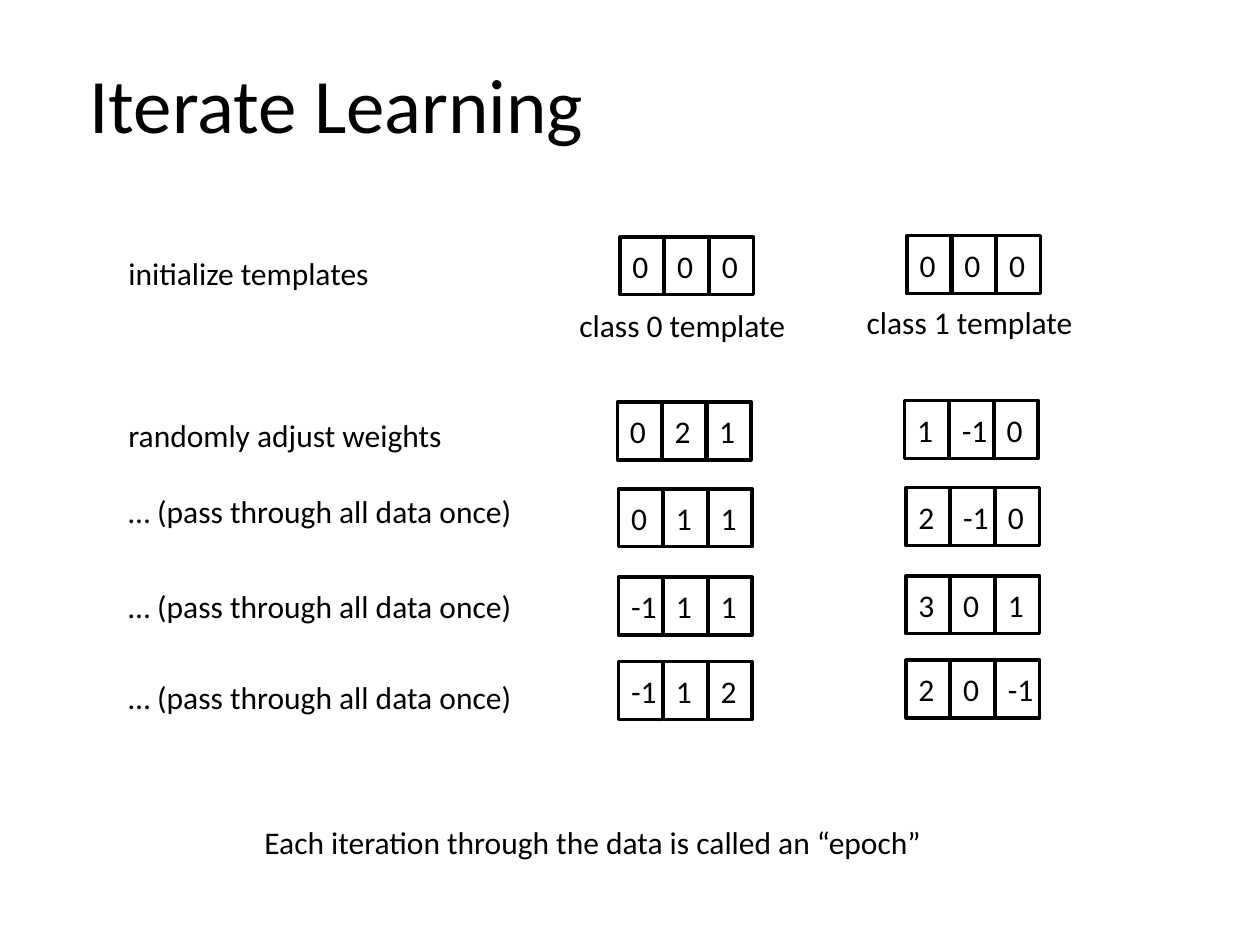
from pptx import Presentation
from pptx.dml.color import RGBColor
from pptx.enum.shapes import MSO_SHAPE as Shape
from pptx.enum.text import MSO_ANCHOR as Anchor, PP_ALIGN as Align
from pptx.util import Inches, Pt

BLACK = "000000"
CELL_WIDTH, CELL_HEIGHT, CELL_STEP = 0.35, 0.46, 0.355
CLASS_GAP, CLASS_RISE = 2.28, 0.01
PASS_TEXT = "… (pass through all data once)"

# Left and top of the class 0 template, then the weights of both classes
WEIGHT_ROWS = [
    (4.92, 1.88, (0, 0, 0), (0, 0, 0)),
    (4.9, 3.19, (0, 2, 1), (1, -1, 0)),
    (4.91, 3.88, (0, 1, 1), (2, -1, 0)),
    (4.91, 4.58, (-1, 1, 1), (3, 0, 1)),
    (4.91, 5.25, (-1, 1, 2), (2, 0, -1)),
]

# Left, top, width, height and paragraphs
LABELS = [
    (0.92, 1.97, 2.25, 0.4, ["initialize templates"]),
    (4.5, 2.38, 1.9, 0.4, ["class 0 template"]),
    (6.78, 2.36, 1.9, 0.4, ["class 1 template"]),
    (0.92, 3.25, 3.55, 1.01, ["randomly adjust weights", PASS_TEXT]),
    (0.92, 4.61, 3.55, 0.4, [PASS_TEXT]),
    (0.92, 5.33, 3.55, 0.4, [PASS_TEXT]),
    (2, 6.48, 6.44, 0.4, ["Each iteration through the data is called an “epoch”"]),
]


def rgb(value):
    return RGBColor.from_string(value)


def write(shape, paragraphs, size=18, color=BLACK, font="Calibri", gap=0,
          anchor=Anchor.TOP, wrap=True):
    """Fill a shape with left-aligned paragraphs, gap points apart."""
    frame = shape.text_frame
    frame.word_wrap = wrap
    frame.vertical_anchor = anchor
    frame.text = "\n".join(paragraphs)
    for index, paragraph in enumerate(frame.paragraphs):
        paragraph.alignment = Align.LEFT
        paragraph.space_before = Pt(gap if index else 0)
        for run in paragraph.runs:
            run.font.size = Pt(size)
            run.font.name = font
            run.font.color.rgb = rgb(color)
    return frame


def place_title(slide, text, left, top, width, height):
    title = slide.shapes.title
    title.left, title.top = Inches(left), Inches(top)
    title.width, title.height = Inches(width), Inches(height)
    write(title, [text], size=44, wrap=False)


def add_label(slide, left, top, width, height, paragraphs):
    box = slide.shapes.add_textbox(
        Inches(left), Inches(top), Inches(width), Inches(height))
    write(box, paragraphs, gap=22)


def add_template(slide, left, top, weights):
    """Draw one class template as a row of weight cells."""
    for index, weight in enumerate(weights):
        cell = slide.shapes.add_shape(
            Shape.RECTANGLE, Inches(left + index * CELL_STEP), Inches(top),
            Inches(CELL_WIDTH), Inches(CELL_HEIGHT))
        cell.shadow.inherit = False
        cell.fill.background()
        cell.line.color.rgb = rgb(BLACK)
        cell.line.width = Pt(2)
        frame = write(cell, [str(weight)], anchor=Anchor.MIDDLE)
        frame.margin_left = Inches(0.1)
        frame.margin_right = Inches(0)


def main():
    presentation = Presentation()
    presentation.slide_width = Inches(10)
    presentation.slide_height = Inches(7.5)
    slide = presentation.slides.add_slide(presentation.slide_layouts[5])

    place_title(slide, "Iterate Learning", 0.61, 0.4, 4.17, 0.84)
    for label in LABELS:
        add_label(slide, *label)
    for left, top, class_0, class_1 in WEIGHT_ROWS:
        add_template(slide, left, top, class_0)
        add_template(slide, left + CLASS_GAP, top - CLASS_RISE, class_1)

    presentation.save("out.pptx")


if __name__ == "__main__":
    main()
